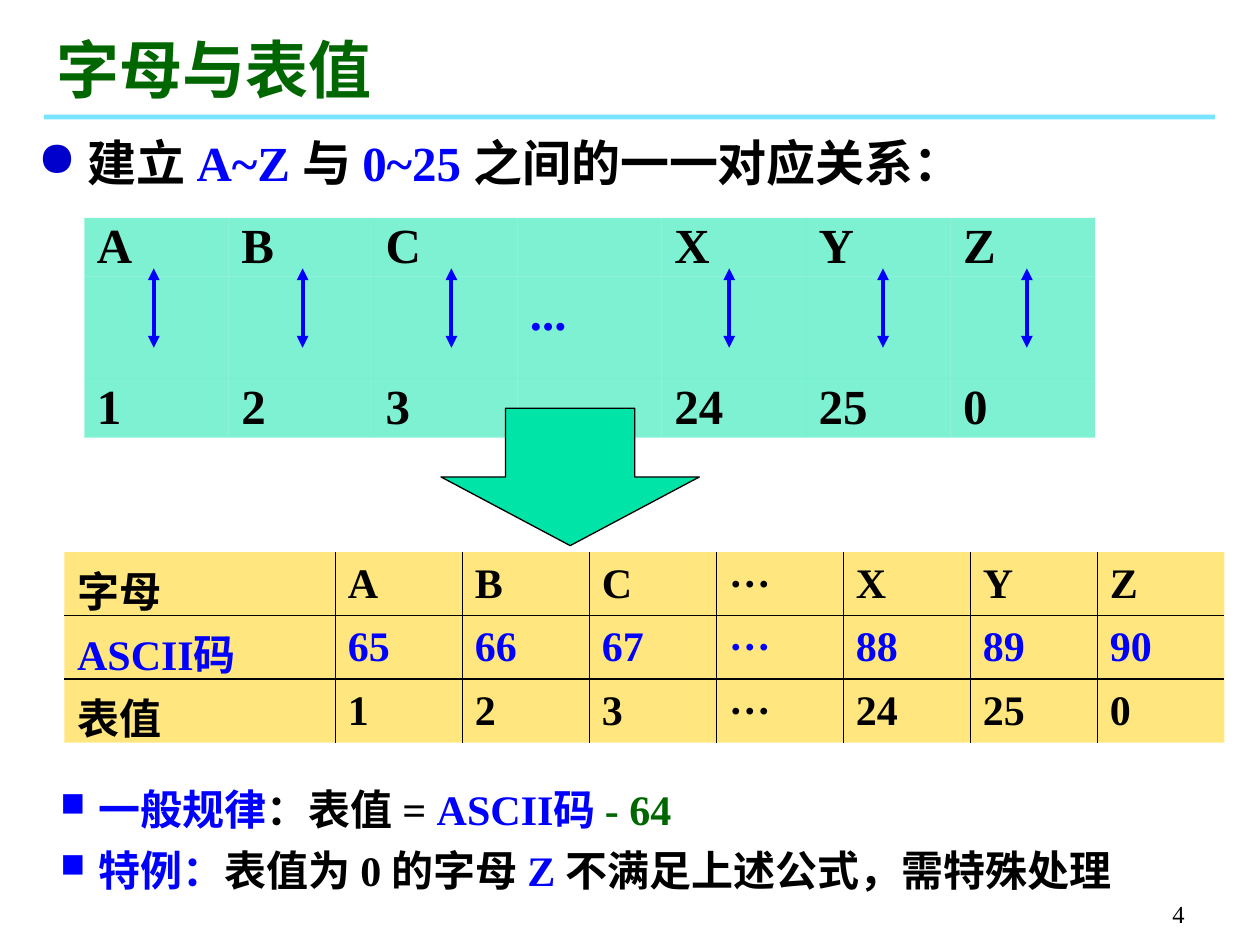
from typing import NamedTuple

from lxml.etree import SubElement
from pptx import Presentation
from pptx.dml.color import RGBColor
from pptx.enum.shapes import MSO_CONNECTOR, MSO_SHAPE
from pptx.enum.text import MSO_ANCHOR, PP_ALIGN
from pptx.oxml import parse_xml
from pptx.oxml.ns import nsdecls, qn
from pptx.util import Cm, Pt

BLACK, BLUE, GREEN = "000000", "0000FF", "006600"
MINT, GOLD, SKY = "00E4A8", "FFCF01", "00CCFF"
PLAIN = "{2D5ABB26-0587-4C30-8999-92F81FD0307C}"  # no style, no grid


class Box(NamedTuple):
    left: float
    top: float
    width: float
    height: float


class Run(NamedTuple):
    text: str
    color: str = BLACK


class Bullet(NamedTuple):
    mark: str
    color: str
    size: int
    indent: float


class Grid(NamedTuple):
    left: float
    top: float
    cols: list[float]
    rows: list[float]
    fill: str
    size: int
    pad: float
    ruled: bool
    cells: list[list[Run]]


def rgb(value: str) -> RGBColor:
    return RGBColor.from_string(value)


def paint(fill, color: str, alpha: int = 100) -> None:
    fill.solid()
    fill.fore_color.rgb = rgb(color)
    if alpha < 100:
        node = fill._xPr.find(qn("a:solidFill"))[0]
        SubElement(node, qn("a:alpha"), val=str(alpha * 1000))


def write(para, runs: list[Run], size: int, bold: bool = True) -> None:
    look = {"size": Pt(size), "name": "Times New Roman", "bold": bold}
    for item in runs:
        run = para.add_run()
        run.text = item.text
        for key, value in look.items():
            setattr(run.font, key, value)
        run.font.color.rgb = rgb(item.color)


def mark(para, dot: Bullet) -> None:
    props = para._p.get_or_add_pPr()
    gap = Cm(dot.indent)
    props.set("marL", str(gap))
    props.set("indent", str(-gap))
    color = SubElement(props, qn("a:buClr"))
    SubElement(color, qn("a:srgbClr"), val=dot.color)
    SubElement(props, qn("a:buSzPct"), val=str(dot.size * 1000))
    SubElement(props, qn("a:buChar"), char=dot.mark)


def add_text(slide, box: Box, lines: list[list[Run]], size: int,
             dot: Bullet | None = None, space: int = 0, bold: bool = True):
    frame = slide.shapes.add_textbox(*map(Cm, box)).text_frame
    frame.word_wrap = True
    for i, runs in enumerate(lines):
        para = frame.add_paragraph() if i else frame.paragraphs[0]
        para.space_before = Pt(space)
        if dot:
            mark(para, dot)
        write(para, runs, size, bold)
    return frame


def add_shape(slide, kind, box: Box, color: str, alpha: int = 100):
    shape = slide.shapes.add_shape(kind, *map(Cm, box))
    shape.shadow.inherit = False
    paint(shape.fill, color, alpha)
    shape.line.fill.background()
    return shape


def add_arrow(slide, x: float, top: float, end: float) -> None:
    line = slide.shapes.add_connector(
        MSO_CONNECTOR.STRAIGHT, Cm(x), Cm(top), Cm(x), Cm(end))
    line.line.color.rgb = rgb(BLUE)
    line.line.width = Pt(2.25)
    edge = line.line._get_or_add_ln()
    for tag in ("a:headEnd", "a:tailEnd"):
        SubElement(edge, qn(tag), type="triangle")
    SubElement(line._element.spPr, qn("a:effectLst"))


def rule(cell, sides: list[str]) -> None:
    for i, side in enumerate(sides):
        cell._tc.get_or_add_tcPr().insert(i, parse_xml(
            f'<a:ln{side} {nsdecls("a")} w="12700"><a:solidFill>'
            f'<a:srgbClr val="{BLACK}"/></a:solidFill></a:ln{side}>'))


def add_grid(slide, grid: Grid):
    high, wide = len(grid.rows), len(grid.cols)
    frame = slide.shapes.add_table(
        high, wide, Cm(grid.left), Cm(grid.top),
        Cm(sum(grid.cols)), Cm(sum(grid.rows)))
    table = frame.table
    table.first_row = table.horz_banding = False
    table._tbl.tblPr.find(qn("a:tableStyleId")).text = PLAIN
    for col, width in zip(table.columns, grid.cols):
        col.width = Cm(width)
    for row, height in zip(table.rows, grid.rows):
        row.height = Cm(height)
    look = {"vertical_anchor": MSO_ANCHOR.MIDDLE,
            "margin_top": Cm(grid.pad), "margin_bottom": Cm(grid.pad)}
    for r, line in enumerate(grid.cells):
        for c, item in enumerate(line):
            cell = table.cell(r, c)
            for key, value in look.items():
                setattr(cell, key, value)
            paint(cell.fill, grid.fill, 50)
            if item.text:
                write(cell.text_frame.paragraphs[0], [item], grid.size)
            if grid.ruled:  # inner lines only
                inner = {"L": c > 0, "R": c < wide - 1,
                         "T": r > 0, "B": r < high - 1}
                rule(cell, [side for side, on in inner.items() if on])
    return table


def row(words: list[str], color: str = BLACK) -> list[Run]:
    return [Run(word, color) for word in words]


def main() -> None:
    deck = Presentation()
    deck.slide_width, deck.slide_height = Cm(25.4), Cm(19.05)
    slide = deck.slides.add_slide(deck.slide_layouts[5])

    # Title, its underline and the page number
    add_shape(slide, MSO_SHAPE.RECTANGLE, Box(0.89, 2.31, 23.6, 0.1), SKY, 53)
    title = slide.shapes.title
    place = Box(0.89, 0.48, 15.19, 1.78)
    for key, value in place._asdict().items():
        setattr(title, key, Cm(value))
    title.text_frame.vertical_anchor = MSO_ANCHOR.BOTTOM
    head = title.text_frame.paragraphs[0]
    head.alignment = PP_ALIGN.LEFT
    write(head, [Run("字母与表值", GREEN)], 36)
    page = add_text(slide, Box(18.85, 17.58, 5.28, 1.27), [[Run("4")]], 14,
                    bold=False)
    page.vertical_anchor = MSO_ANCHOR.BOTTOM
    page.paragraphs[0].alignment = PP_ALIGN.RIGHT

    # Opening statement
    add_text(slide, Box(0.51, 2.54, 20.6, 1.45), [[
        Run(" 建立 "), Run("A~Z ", BLUE), Run("与 "), Run("0~25 ", BLUE),
        Run("之间的一一对应关系："),
    ]], 28, Bullet("●", "0000CC", 100, 0.56))

    # Letters matched with numbers
    ends = ["A", "B", "C", "", "X", "Y", "Z"]
    codes = ["1", "2", "3", "", "24", "25", "0"]
    pairs = add_grid(slide, Grid(
        1.7, 4.39, [2.91] * 7, [1.17, 2.06, 1.17], MINT, 28, 0, False,
        [row(ends), row([""] * 7), row(codes)]))
    dots = pairs.cell(1, 3).text_frame.paragraphs[0]
    write(dots, [Run("...", BLUE)], 48)
    dots.runs[0].font._element.set("baseline", "30000")
    for x in (3.1, 6.1, 9.1, 14.7, 17.8, 20.7):
        add_arrow(slide, x, 5.41, 7.01)

    # Letters, codes and table values
    add_grid(slide, Grid(
        1.3, 11.13, [5.46] + [2.56] * 7, [1.28] * 3, GOLD, 24, 0.13, True,
        [row(["字母", "A", "B", "C", "···", "X", "Y", "Z"]),
         row(["ASCII码", "65", "66", "67", "···", "88", "89", "90"], BLUE),
         row(["表值", "1", "2", "3", "···", "24", "25", "0"])]))

    # General rule and special case
    add_text(slide, Box(0.97, 15.67, 23.5, 2.51), [
        [Run(" "), Run("一般规律", BLUE), Run("：表值 = "),
         Run("ASCII码 ", BLUE), Run("- 64", GREEN)],
        [Run(" "), Run("特例：", BLUE), Run("表值为 0 的字母 "),
         Run("Z ", BLUE), Run("不满足上述公式，需特殊处理")],
    ], 24, Bullet("■", BLUE, 80, 0.58), 6)

    # Large arrow between the tables
    down = add_shape(slide, MSO_SHAPE.DOWN_ARROW,
                     Box(8.89, 8.23, 5.21, 2.77), MINT)
    down.line.color.rgb = rgb(BLACK)
    down.line.width = Pt(0.75)

    deck.save("out.pptx")


if __name__ == "__main__":
    main()
